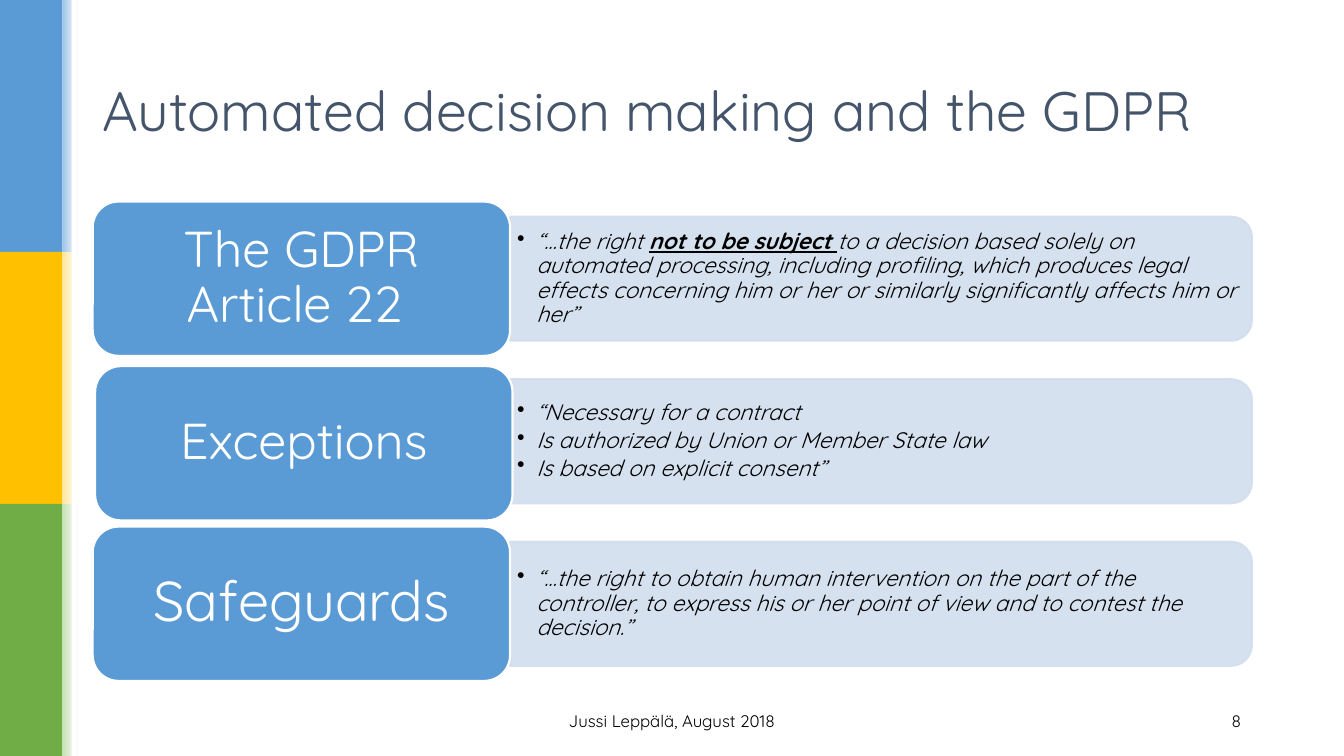
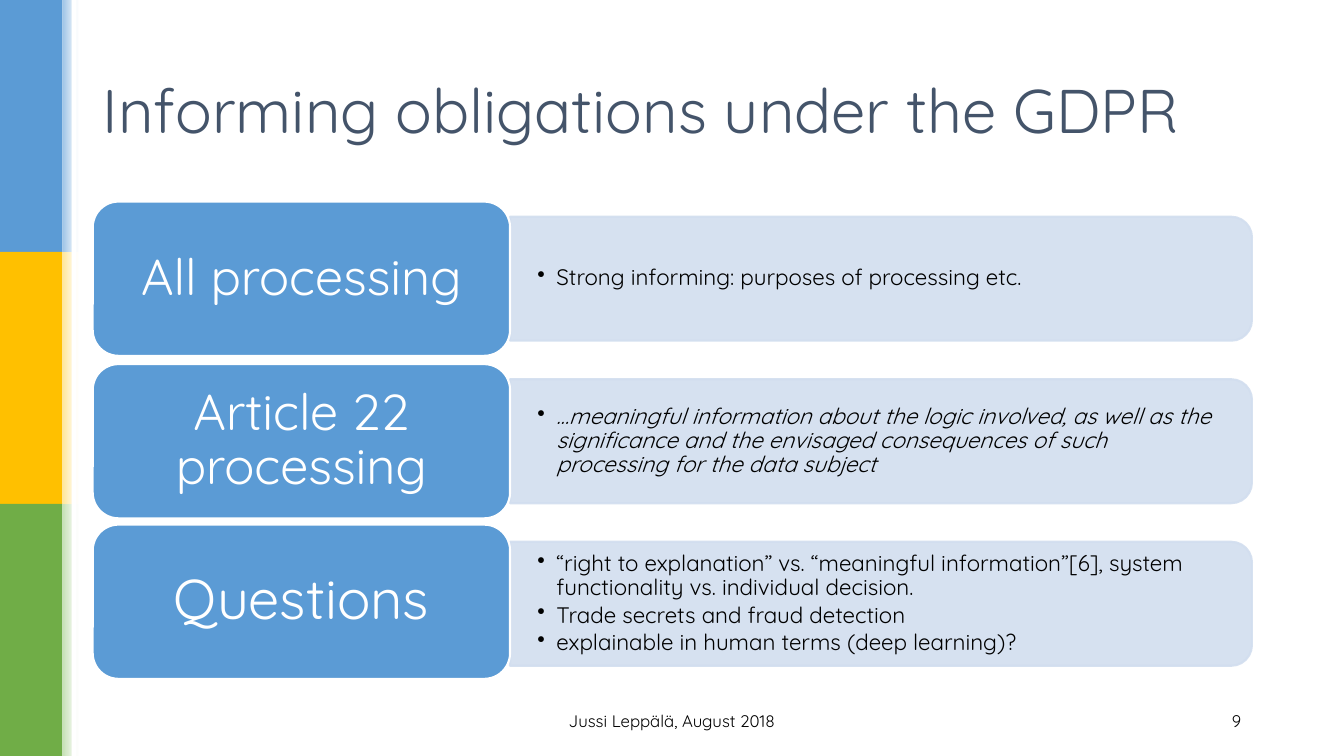
"""Build two slides on automated decisions and informing duties under the GDPR."""
import pptx
import pptx.dml.color
import pptx.enum.shapes
import pptx.enum.text
import pptx.util
from lxml import etree

Pt = pptx.util.Pt
Kind = pptx.enum.shapes.MSO_SHAPE
Side = pptx.enum.text.PP_ALIGN
hue = pptx.dml.color.RGBColor.from_string
NS = "{http://schemas.openxmlformats.org/drawingml/2006/main}"

deck = pptx.Presentation()
deck.slide_width = pptx.util.Inches(13.33)
deck.slide_height = pptx.util.Inches(7.5)
COL, ROW = deck.slide_width / 100, deck.slide_height / 100

BLUE, PALE, WHITE, BLACK, SLATE = "5B9BD5", "D2DEEF", "FFFFFF", "000000", "44546A"
BANDS = [(BLUE, "9DC3E6"), ("FFC000", "FFE699"), ("70AD47", "C5E0B4")]
BAND = 100 / 3
TOP, STEP = 26.67, 21.5
SLANT = {"italic": True}
STRESS = {"italic": True, "bold": True, "underline": True}
TIGHT, LOOSE = (0.07, 0.03), (0.27, 0.14)

PAGES = [
    {"title": "Automated decision making and the GDPR", "size": 39.6, "page": "8", "pad": TIGHT, "rows": [
        ("The GDPR Article 22 ", 36, (0, 0), [[
            ("“…the right ", SLANT),
            ("not to be subject ", STRESS),
            ("to a decision based solely on automated processing, including profiling, "
             "which produces legal effects concerning him or her or similarly "
             "significantly affects him or her”", SLANT)]]),
        ("Exceptions", 36, (0.18, 0.27), [
            [("“Necessary for a contract", SLANT)],
            [("Is authorized by Union or Member State law", SLANT)],
            [("Is based on explicit consent”", SLANT)]]),
        ("Safeguards", 40, (0, 0), [[
            ("“…the right to obtain human intervention on the part of the controller, "
             "to express his or her point of view and to contest the decision.”", SLANT)]]),
    ]},
    {"title": "Informing obligations under the GDPR", "size": 44, "page": "9", "pad": LOOSE, "rows": [
        ("All processing", 36, (0, 0), [
            [("Strong informing: purposes of processing etc.", {})]]),
        ("Article 22 processing", 36, (0, 0), [[
            ("…meaningful information about the logic involved, as well as the significance "
             "and the envisaged consequences of such processing for the data subject", SLANT)]]),
        ("Questions", 40, (0, -0.27), [
            [("“right to explanation” vs. “meaningful information”[6], system functionality "
              "vs. individual decision.", {})],
            [("Trade secrets and fraud detection", {})],
            [("explainable in human terms (deep learning)?", {})]]),
    ]},
]


def draw(sheet, kind, box, fill=None, edge=None):
    """Add a shape, or a text box when kind is None, placed in columns and rows."""
    x, y, w, h = box
    spot = [round(n) for n in (x * COL, y * ROW, w * COL, h * ROW)]
    if kind is None:
        return sheet.shapes.add_textbox(*spot)
    shape = sheet.shapes.add_shape(kind, *spot)
    shape.shadow.inherit = False
    shape.fill.solid()
    shape.fill.fore_color.rgb = hue(fill)
    if edge:
        shape.line.color.rgb = hue(edge)
        shape.line.width = Pt(1.5)
    else:
        shape.line.fill.background()
    return shape


def write(shape, paras, size, ink, side=Side.LEFT, pad=(0.1, 0.05), lead=1.0, dots=False):
    """Fill a shape with paragraphs, each a list of (text, format) runs."""
    frame = shape.text_frame
    across, down = [pptx.util.Inches(n) for n in pad]
    look = {"word_wrap": True, "vertical_anchor": pptx.enum.text.MSO_ANCHOR.MIDDLE,
            "margin_left": across, "margin_right": across,
            "margin_top": down, "margin_bottom": down}
    for name, value in look.items():
        setattr(frame, name, value)
    for i, runs in enumerate(paras):
        para = frame.add_paragraph() if i else frame.paragraphs[0]
        para.alignment = side
        para.line_spacing = lead
        if dots:
            para.space_after = Pt(0.15 * size)
            props = para._p.get_or_add_pPr()
            hang = pptx.util.Inches(0.19)
            props.set("marL", str(hang))
            props.set("indent", str(-hang))
            etree.SubElement(props, NS + "buChar", char="•")
        for text, extra in runs:
            run = para.add_run()
            run.text = text
            for name, value in {"name": "Quicksand", "size": Pt(size), **extra}.items():
                setattr(run.font, name, value)
            run.font.color.rgb = hue(ink)


for page in PAGES:
    sheet = deck.slides.add_slide(deck.slide_layouts[6])

    for i, (full, light) in enumerate(BANDS):
        draw(sheet, Kind.RECTANGLE, (0, i * BAND, 4.65, BAND), full)
        fade = draw(sheet, Kind.RECTANGLE, (4.65, i * BAND, 1.2, BAND), light)
        fade.fill.gradient()
        fade.fill.gradient_angle = 0
        for stop, tone, place in zip(fade.fill.gradient_stops, (light, WHITE), (0, 1)):
            stop.color.rgb = hue(tone)
            stop.position = place
    draw(sheet, Kind.RECTANGLE, (5.33, 0, 0.38, 100), WHITE)

    for i, (label, size, (dx, dy), paras) in enumerate(page["rows"]):
        y = TOP + i * STEP
        panel = draw(sheet, Kind.ROUND_2_SAME_RECTANGLE, (37.95, y + 2, 55.2, 16.4), PALE, PALE)
        wide, high = panel.width, panel.height
        turn = {"left": panel.left + (wide - high) // 2, "top": panel.top - (wide - high) // 2,
                "width": high, "height": wide, "rotation": 90}
        for name, value in turn.items():
            setattr(panel, name, value)
        for tone in panel.element.spPr.iter(NS + "srgbClr"):
            etree.SubElement(tone, NS + "alpha", val="90000")
        note = draw(sheet, None, (37.95, y + 2.8, 54.75, 14.8))
        write(note, paras, 16, BLACK, pad=page["pad"], lead=0.9, dots=True)
        card = draw(sheet, Kind.ROUNDED_RECTANGLE, (6.9 + dx, y + dy, 31.05, 20.4), BLUE, WHITE)
        write(card, [[(label, {})]], size, WHITE, Side.CENTER, (0.15, 0.07), 0.9)

    foot = draw(sheet, None, (38.1, 92.67, 23.78, 5.33))
    write(foot, [[("Jussi Leppälä, August 2018", {})]], 12, BLACK, Side.CENTER)
    count = draw(sheet, None, (66.23, 92.67, 26.85, 5.33))
    write(count, [[(page["page"], {})]], 12, BLACK, Side.RIGHT)
    head = draw(sheet, None, (6.9, 5.33, 86.25, 19.33))
    write(head, [[(page["title"], {})]], page["size"], SLATE, lead=0.9)

deck.save("out.pptx")
